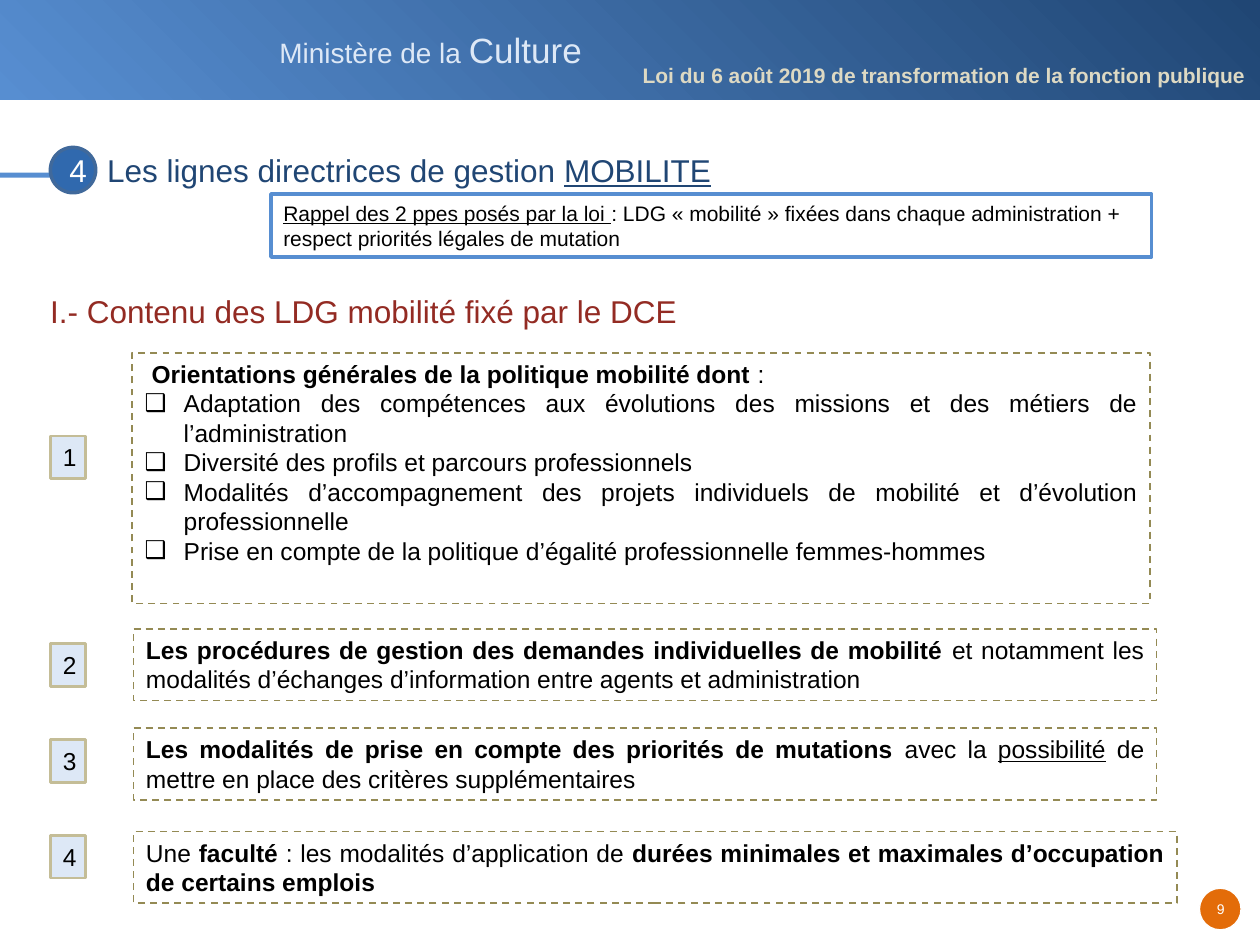
from lxml.etree import SubElement
from pptx import Presentation
from pptx.dml.color import RGBColor
from pptx.enum.dml import MSO_LINE
from pptx.enum.shapes import MSO_SHAPE
from pptx.enum.text import MSO_ANCHOR, PP_ALIGN
from pptx.oxml.ns import qn
from pptx.util import Inches, Pt

COLORS = {
    "navy": "204674", "sky": "578ED1", "pale": "DDE8F6", "disc": "3069AE",
    "disc_line": "40699B", "orange": "E36C09", "cream": "DDD9C3", "sand": "C4BD97",
    "olive": "948A54", "red": "932B23", "black": "000000", "white": "FFFFFF",
}

# A span is (text, style): "b" is bold, "u" is underlined.
TITLE = [("Les lignes directrices de gestion ", ""), ("MOBILITE", "u")]
MINISTRY = [("Ministère de la ", ""), ("Culture", "")]
LAW = [("Loi du 6 août 2019 de transformation de la fonction publique", "b")]
REMINDER = [
    ("Rappel des 2 ppes posés par la loi ", "u"),
    (": LDG «\u00a0mobilité\u00a0» fixées dans chaque administration + "
     "respect priorités légales de mutation", ""),
]
SECTION = [("I.- Contenu des LDG mobilité fixé par le DCE", "")]
ORIENTATIONS = [
    "Adaptation des compétences aux évolutions des missions et des métiers de l’administration",
    "Diversité des profils et parcours professionnels",
    "Modalités d’accompagnement des projets individuels de mobilité et d’évolution professionnelle",
    "Prise en compte de la politique d’égalité professionnelle femmes-hommes",
]
# Each item: badge top, box (left, top, width, height), lead spans, bullets
ITEMS = [
    (3.46, (1.05, 2.8, 8.08, 1.99),
     [(" ", ""), ("Orientations générales de la politique mobilité dont", "b"), (" :", "")],
     ORIENTATIONS),
    (5.11, (1.06, 4.99, 8.12, 0.57),
     [("Les procédures de gestion des demandes individuelles de mobilité ", "b"),
      ("et notamment les modalités d’échanges d’information entre agents et administration", "")],
     []),
    (5.87, (1.06, 5.78, 8.12, 0.57),
     [("Les modalités de prise en compte des priorités de mutations", "b"), (" avec la ", ""),
      ("possibilité", "u"), (" de mettre en place des critères supplémentaires", "")],
     []),
    (6.63, (1.06, 6.6, 8.28, 0.57),
     [("Une ", ""), ("faculté", "b"), (" : les modalités d’application de ", ""),
      ("durées minimales et maximales d’occupation de certains emplois", "b")],
     []),
]


def rgb(name):
    return RGBColor.from_string(COLORS[name])


def write(paragraph, spans, size, color, align=PP_ALIGN.LEFT):
    paragraph.alignment = align
    for text, style in spans:
        run = paragraph.add_run()
        run.text = text
        run.font.name = "Arial"
        run.font.size = Pt(size)
        run.font.color.rgb = rgb(color)
        run.font.bold = "b" in style
        run.font.underline = "u" in style


def add_bullet(paragraph):
    properties = paragraph._p.get_or_add_pPr()
    properties.set("marL", str(Inches(0.31)))
    properties.set("indent", str(-Inches(0.31)))
    SubElement(properties, qn("a:buFont"), typeface="Arial")
    SubElement(properties, qn("a:buChar"), char="❑")


def add_shape(page, kind, place, fill=None, line=None, width=1):
    shape = page.shapes.add_shape(kind, *map(Inches, place))
    shape.shadow.inherit = False
    if fill:
        shape.fill.solid()
        shape.fill.fore_color.rgb = rgb(fill)
    else:
        shape.fill.background()
    if line:
        shape.line.color.rgb = rgb(line)
        shape.line.width = Pt(width)
    else:
        shape.line.fill.background()
    shape.text_frame.vertical_anchor = MSO_ANCHOR.TOP
    return shape


def add_text(page, place, spans, size, color, align=PP_ALIGN.LEFT, wrap=True, inset=None):
    frame = page.shapes.add_textbox(*map(Inches, place)).text_frame
    frame.word_wrap = wrap
    if inset is not None:
        frame.margin_left = frame.margin_right = Inches(inset)
        frame.margin_top = frame.margin_bottom = Inches(inset)
    write(frame.paragraphs[0], spans, size, color, align)
    return frame.paragraphs[0]


def add_header(page):
    banner = add_shape(page, MSO_SHAPE.RECTANGLE, (0, 0, 10, 0.79))
    banner.fill.gradient()
    banner.fill.gradient_angle = 225
    for stop, color in zip(banner.fill.gradient_stops, ("navy", "sky")):
        stop.color.rgb = rgb(color)
    ministry = add_text(page, (2.12, 0.18, 2.63, 0.44), MINISTRY, 16, "pale", wrap=False)
    ministry.runs[1].font.size = Pt(20)
    law = add_text(page, (5.1, 0.53, 4.85, 0.17), LAW, 12, "cream", inset=0)
    law.line_spacing = 0.85
    law.space_after = Pt(6)


def add_title(page):
    add_shape(page, MSO_SHAPE.RECTANGLE, (0, 1.37, 0.68, 0.04), "sky")
    disc = add_shape(page, MSO_SHAPE.OVAL, (0.4, 1.17, 0.36, 0.36), "disc", "disc_line", 2)
    disc.text_frame.vertical_anchor = MSO_ANCHOR.MIDDLE
    write(disc.text_frame.paragraphs[0], [("4", "")], 18, "white", PP_ALIGN.CENTER)

    title = page.shapes.title
    title.left, title.top, title.width, title.height = map(Inches, (0.75, 1.06, 9.07, 0.47))
    title.text_frame.vertical_anchor = MSO_ANCHOR.TOP
    heading = title.text_frame.paragraphs[0]
    write(heading, TITLE, 18, "navy")
    heading.line_spacing = Pt(28)


def add_item(page, number, badge_top, place, lead, bullets):
    badge = add_shape(page, MSO_SHAPE.RECTANGLE, (0.4, badge_top, 0.28, 0.34),
                      "pale", "sand", 1.5)
    write(badge.text_frame.paragraphs[0], [(str(number), "")], 14, "black", PP_ALIGN.JUSTIFY)

    box = add_shape(page, MSO_SHAPE.RECTANGLE, place, line="olive")
    box.line.dash_style = MSO_LINE.DASH
    write(box.text_frame.paragraphs[0], lead, 14, "black", PP_ALIGN.JUSTIFY)
    for bullet in bullets:
        paragraph = box.text_frame.add_paragraph()
        add_bullet(paragraph)
        write(paragraph, [(bullet, "")], 14, "black", PP_ALIGN.JUSTIFY)


def main():
    deck = Presentation()
    deck.slide_width, deck.slide_height = Inches(10), Inches(7.5)
    page = deck.slides.add_slide(deck.slide_layouts[5])

    add_header(page)
    add_title(page)
    reminder = add_shape(page, MSO_SHAPE.RECTANGLE, (2.15, 1.54, 6.99, 0.5), "white", "sky", 2)
    write(reminder.text_frame.paragraphs[0], REMINDER, 12, "black")
    add_text(page, (0.3, 2.27, 5.28, 0.4), SECTION, 18, "red")
    for number, item in enumerate(ITEMS, 1):
        add_item(page, number, *item)

    add_shape(page, MSO_SHAPE.OVAL, (9.52, 7.05, 0.33, 0.33), "orange", "white", 0.75)
    add_text(page, (9.54, 7.1, 0.3, 0.23), [("9", "")], 8, "white",
             PP_ALIGN.CENTER, wrap=False, inset=0.05)
    deck.save("out.pptx")


if __name__ == "__main__":
    main()
